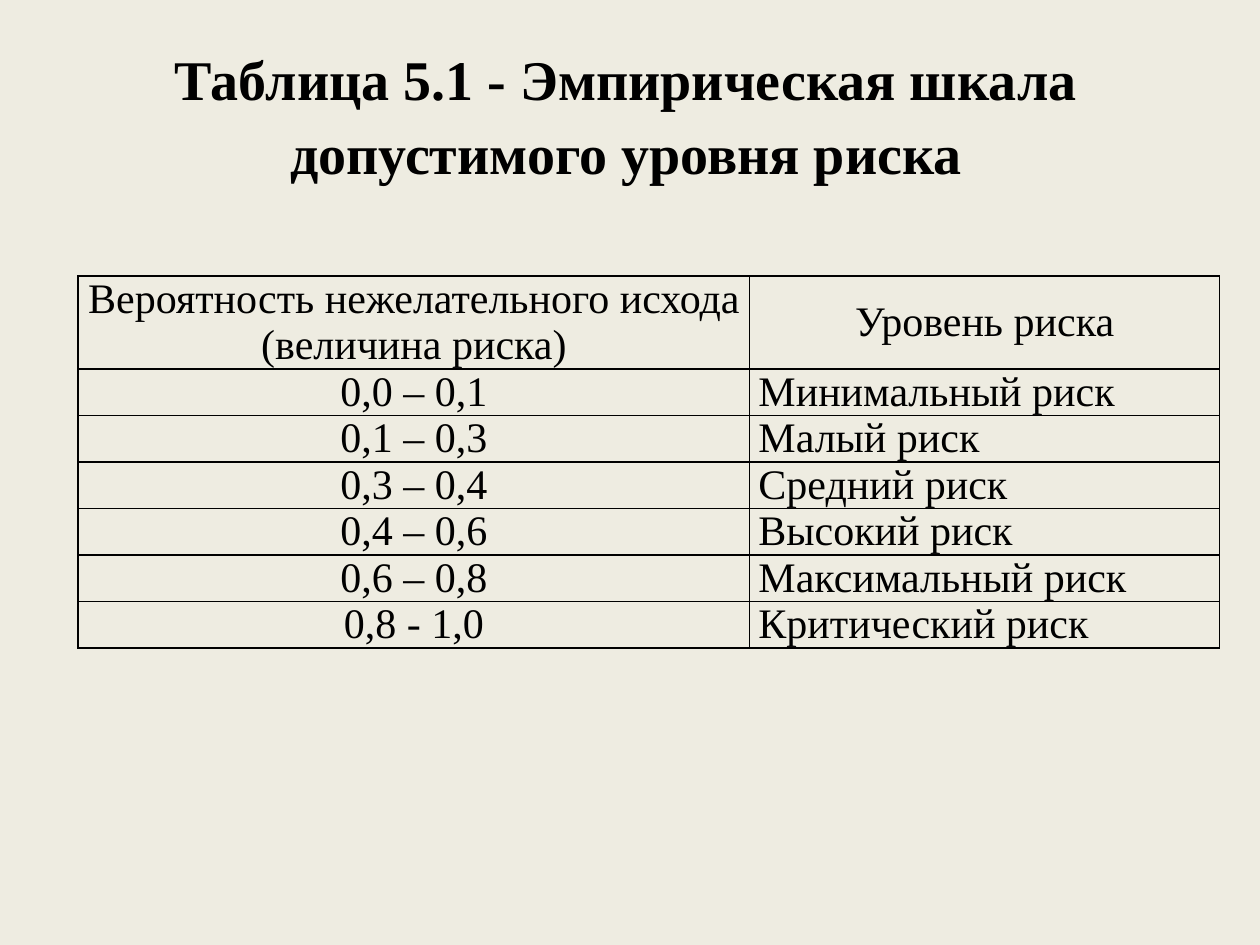
from pptx import Presentation
from pptx.dml.color import RGBColor
from pptx.enum.text import MSO_ANCHOR as Anchor, MSO_AUTO_SIZE as AutoSize, PP_ALIGN as Align
from pptx.oxml import parse_xml
from pptx.oxml.ns import nsdecls
from pptx.util import Inches, Pt

BLACK = RGBColor(0x00, 0x00, 0x00)
BEIGE = RGBColor(0xEE, 0xEC, 0xE1)
FONT = "Times New Roman"

TITLE = "Таблица 5.1 - Эмпирическая шкала допустимого уровня риска"
RISK_SCALE = [
    ("Вероятность нежелательного исхода (величина риска)", "Уровень риска"),
    ("0,0 – 0,1", "Минимальный риск"),
    ("0,1 – 0,3", "Малый риск"),
    ("0,3 – 0,4", "Средний риск"),
    ("0,4 – 0,6", "Высокий риск"),
    ("0,6 – 0,8", "Максимальный риск"),
    ("0,8 - 1,0", "Критический риск"),
]
COLUMN_WIDTHS = (5.33, 3.73)
HEADER_HEIGHT, ROW_HEIGHT = 0.72, 0.36


def write_text(para, text, size, align, bold=False):
    para.alignment = align
    span = para.add_run()
    span.text = text
    font = span.font
    font.name, font.size, font.bold = FONT, Pt(size), bold
    font.color.rgb = BLACK


def add_title(page, left, top, width, height):
    title = page.shapes.title
    title.left, title.top = Inches(left), Inches(top)
    title.width, title.height = Inches(width), Inches(height)
    frame = title.text_frame
    frame.word_wrap = True
    frame.auto_size = AutoSize.NONE
    frame.vertical_anchor = Anchor.MIDDLE
    para = frame.paragraphs[0]
    para.line_spacing = 1.1
    write_text(para, TITLE, 32, Align.CENTER, bold=True)


def outline_cell(cell):
    """Draw a 1 pt line on every side; borders must precede the fill."""
    properties = cell._tc.get_or_add_tcPr()
    for position, side in enumerate(("lnL", "lnR", "lnT", "lnB")):
        properties.insert(position, parse_xml(
            f'<a:{side} {nsdecls("a")} w="{Pt(1)}"><a:solidFill>'
            f'<a:srgbClr val="{BLACK}"/></a:solidFill></a:{side}>'))


def add_risk_table(page, left, top, width, height):
    table = page.shapes.add_table(
        len(RISK_SCALE), len(COLUMN_WIDTHS),
        Inches(left), Inches(top), Inches(width), Inches(height)).table
    table.first_row = table.horz_banding = False
    for column, column_width in zip(table.columns, COLUMN_WIDTHS):
        column.width = Inches(column_width)

    for row_index, texts in enumerate(RISK_SCALE):
        is_header = row_index == 0
        table.rows[row_index].height = Inches(HEADER_HEIGHT if is_header else ROW_HEIGHT)
        for column_index, text in enumerate(texts):
            cell = table.cell(row_index, column_index)
            cell.margin_left = cell.margin_right = Inches(0.07)
            cell.margin_top = cell.margin_bottom = 0
            cell.vertical_anchor = Anchor.MIDDLE if is_header else Anchor.TOP
            cell.fill.background()
            outline_cell(cell)
            centred = is_header or column_index == 0
            write_text(cell.text_frame.paragraphs[0], text, 24,
                       Align.CENTER if centred else Align.JUSTIFY)


def main():
    deck = Presentation()
    deck.slide_width, deck.slide_height = Inches(10), Inches(7.5)
    page = deck.slides.add_slide(deck.slide_layouts[5])  # title only
    background = page.background.fill
    background.solid()
    background.fore_color.rgb = BEIGE

    add_title(page, 0.47, 0.26, 9, 1.25)
    add_risk_table(page, 0.62, 2.19, sum(COLUMN_WIDTHS),
                   HEADER_HEIGHT + ROW_HEIGHT * (len(RISK_SCALE) - 1))
    deck.save("out.pptx")


if __name__ == "__main__":
    main()
